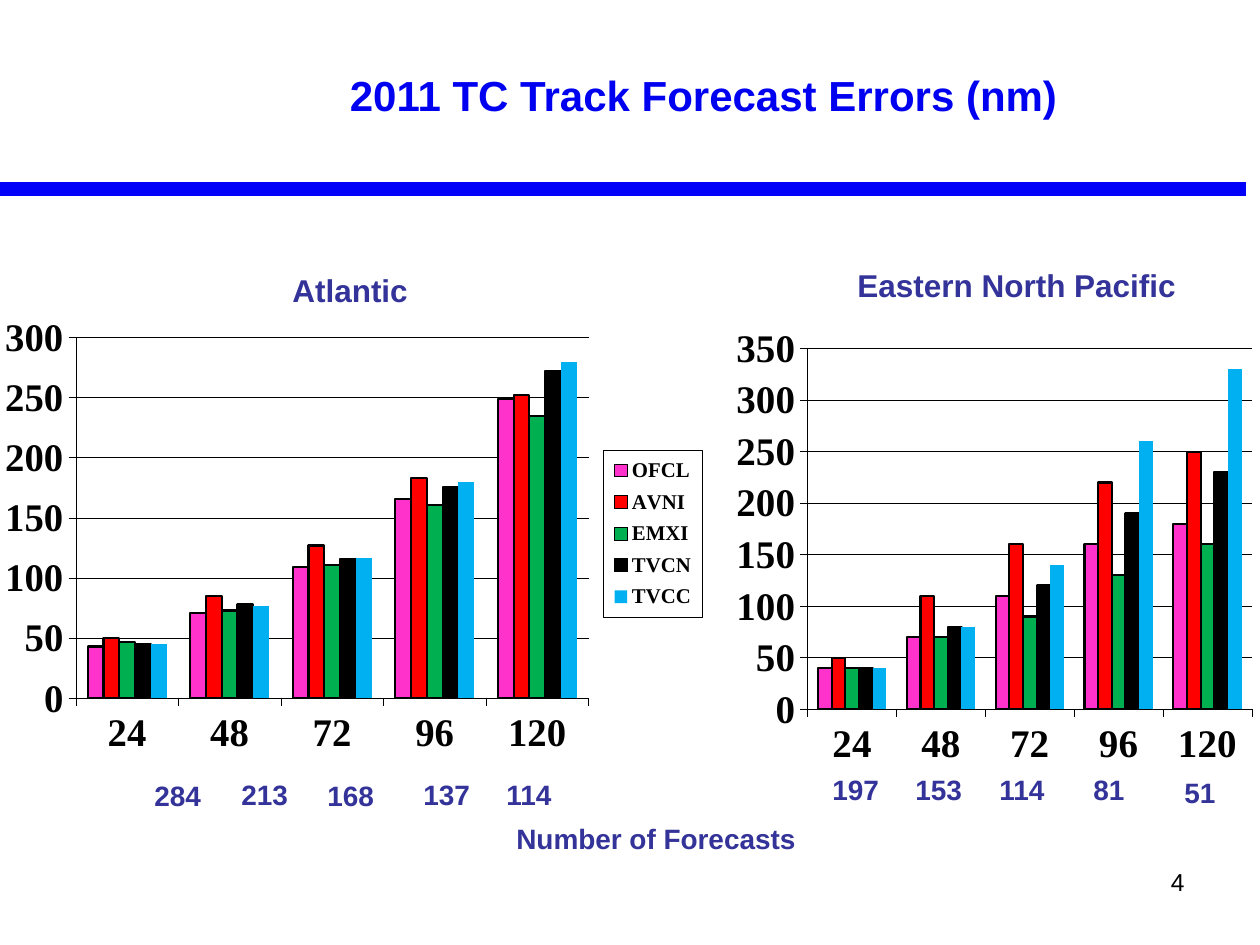
from lxml import etree
from pptx import Presentation
from pptx.chart.data import CategoryChartData
from pptx.dml.color import RGBColor
from pptx.enum.chart import XL_CHART_TYPE, XL_LEGEND_POSITION, XL_TICK_LABEL_POSITION, XL_TICK_MARK
from pptx.enum.shapes import MSO_CONNECTOR
from pptx.enum.text import MSO_ANCHOR, MSO_AUTO_SIZE, PP_ALIGN
from pptx.oxml import parse_xml
from pptx.oxml.ns import nsdecls, qn
from pptx.util import Emu, Pt

BLACK = RGBColor(0x00, 0x00, 0x00)
TITLE_BLUE = RGBColor(0x00, 0x00, 0xF1)
RULE_BLUE = RGBColor(0x01, 0x01, 0xFA)
LABEL_BLUE = RGBColor(0x33, 0x33, 0x99)
PINK = RGBColor(0xFF, 0x33, 0xCC)
RED = RGBColor(0xFF, 0x00, 0x00)
GREEN = RGBColor(0x00, 0xB0, 0x50)
SKY = RGBColor(0x00, 0xB0, 0xF0)

EMU_PER_PX = 914400 / 126
HOURS = ["24", "48", "72", "96", "120"]
SERIES_COLORS = [PINK, RED, GREEN, BLACK, SKY]

ATLANTIC_ERRORS = {
    "OFCL": [43, 71, 109, 166, 249],
    "AVNI": [50, 85, 127, 183, 252],
    "EMXI": [47, 73, 111, 161, 235],
    "TVCN": [45, 78, 116, 176, 272],
    "TVCC": [45, 77, 117, 180, 280],
}
PACIFIC_ERRORS = {
    "Series 1": [40, 70, 110, 160, 180],
    "Series 2": [50, 110, 160, 220, 250],
    "Series 3": [40, 70, 90, 130, 160],
    "Series 4": [40, 80, 120, 190, 230],
    "Series 5": [40, 80, 140, 260, 330],
}
FORECAST_COUNTS = [
    ("284", 142, 772, 73), ("213", 229, 771, 73), ("168", 315, 772, 73),
    ("137", 411, 771, 73), ("114", 494, 771, 71),
    ("197", 820, 766, 73), ("153", 903, 766, 73), ("114", 987, 766, 71),
    ("81", 1081, 766, 57), ("51", 1172, 769, 57),
]


def px(length):
    return Emu(round(length * EMU_PER_PX))


def manual_layout(x, y, width, height, inner=False):
    target = '<c:layoutTarget val="inner"/>' if inner else ""
    return parse_xml(
        f'<c:layout {nsdecls("c")}><c:manualLayout>{target}'
        '<c:xMode val="edge"/><c:yMode val="edge"/>'
        f'<c:x val="{x}"/><c:y val="{y}"/><c:w val="{width}"/><c:h val="{height}"/>'
        '</c:manualLayout></c:layout>'
    )


class SlideBuilder:
    text_font = "Arial"
    chart_font = "Times New Roman"
    axis_size = 22.3
    axis_width = 0.31

    def __init__(self, slide):
        self.slide = slide

    def style_font(self, font, name, size, color, bold=True):
        font.name = name
        font.size = Pt(size)
        font.bold = bold
        font.color.rgb = color

    def style_line(self, line, color, width):
        line.color.rgb = color
        line.width = Pt(width)

    def text(self, text, left, top, width, height, size, color=LABEL_BLUE, bold=True,
             align=PP_ALIGN.LEFT, anchor=MSO_ANCHOR.TOP, wrap=False):
        box = self.slide.shapes.add_textbox(px(left), px(top), px(width), px(height))
        frame = box.text_frame
        frame.word_wrap = wrap
        frame.auto_size = MSO_AUTO_SIZE.NONE if wrap else MSO_AUTO_SIZE.SHAPE_TO_FIT_TEXT
        frame.vertical_anchor = anchor
        paragraph = frame.paragraphs[0]
        paragraph.text = text
        paragraph.alignment = align
        self.style_font(paragraph.font, self.text_font, size, color, bold)

    def rule(self, left, right, y, color, width):
        connector = self.slide.shapes.add_connector(
            MSO_CONNECTOR.STRAIGHT, px(left), px(y), px(right), px(y))
        self.style_line(connector.line, color, width)
        etree.SubElement(connector._element.spPr, qn("a:effectLst"))

    def axis(self, axis):
        axis.major_tick_mark = XL_TICK_MARK.OUTSIDE
        axis.minor_tick_mark = XL_TICK_MARK.NONE
        self.style_font(axis.tick_labels.font, self.chart_font, self.axis_size, BLACK)
        self.style_line(axis.format.line, BLACK, self.axis_width)

    def column_chart(self, errors, left, top, width, height, maximum, plot_layout):
        data = CategoryChartData()
        data.categories = HOURS
        for name, values in errors.items():
            data.add_series(name, values)
        chart = self.slide.shapes.add_chart(
            XL_CHART_TYPE.COLUMN_CLUSTERED, px(left), px(top), px(width), px(height), data).chart
        chart.has_title = False
        chart.has_legend = False
        self.style_font(chart.font, self.chart_font, self.axis_size, BLACK)

        self.axis(chart.category_axis)
        chart.category_axis.tick_label_position = XL_TICK_LABEL_POSITION.LOW
        value_axis = chart.value_axis
        self.axis(value_axis)
        value_axis.minimum_scale = 0
        value_axis.maximum_scale = maximum
        value_axis.major_unit = 50
        value_axis.has_major_gridlines = True
        self.style_line(value_axis.major_gridlines.format.line, BLACK, self.axis_width)

        plot = chart.plots[0]
        plot.vary_by_categories = False
        plot.gap_width = 150
        plot.overlap = 0
        for series, color in zip(plot.series, SERIES_COLORS):
            series.format.fill.solid()
            series.format.fill.fore_color.rgb = color
            if color == SKY:
                series.format.line.fill.background()
            else:
                self.style_line(series.format.line, BLACK, 1.25)
        self.place(chart._chartSpace.chart.plotArea, 0, manual_layout(*plot_layout, inner=True))
        return chart

    def place(self, element, index, layout):
        for existing in element.findall(qn("c:layout")):
            element.remove(existing)
        element.insert(index, layout)

    def legend(self, chart, layout):
        chart.has_legend = True
        legend = chart.legend
        legend.position = XL_LEGEND_POSITION.RIGHT
        legend.include_in_layout = False
        self.style_font(legend.font, self.chart_font, 12, BLACK)
        element = legend._element
        self.place(element, 1, manual_layout(*layout))
        element.find(qn("c:txPr")).addprevious(parse_xml(
            f'<c:spPr {nsdecls("c", "a")}><a:solidFill><a:srgbClr val="FFFFFF"/></a:solidFill>'
            f'<a:ln w="{Pt(self.axis_width)}"><a:solidFill><a:srgbClr val="{BLACK}"/>'
            '</a:solidFill></a:ln></c:spPr>'))


def main():
    presentation = Presentation()
    presentation.slide_width = px(1260)
    presentation.slide_height = px(945)
    builder = SlideBuilder(presentation.slides.add_slide(presentation.slide_layouts[6]))

    builder.text("2011 TC Track Forecast Errors (nm)", 168, 16, 1071, 158, 24, TITLE_BLUE,
                 align=PP_ALIGN.CENTER, anchor=MSO_ANCHOR.MIDDLE, wrap=True)
    builder.rule(0, 1246, 189, RULE_BLUE, 8)

    builder.text("Number of Forecasts", 504, 815, 305, 47, 16)
    for count, left, top, width in FORECAST_COUNTS:
        builder.text(count, left, top, width, 47, 16)
    builder.text("Atlantic", 280, 265, 142, 50, 18)
    builder.text("Eastern North Pacific", 845, 260, 347, 50, 18)

    atlantic = builder.column_chart(ATLANTIC_ERRORS, 5, 315, 719, 451, 300,
                                    (0.09, 0.05, 0.72, 0.8))
    builder.legend(atlantic, (0.83, 0.3, 0.14, 0.37))
    builder.column_chart(PACIFIC_ERRORS, 709, 326, 617, 451, 350, (0.16, 0.05, 0.72, 0.8))

    builder.text("4", 903, 861, 294, 66, 14, BLACK, bold=False,
                 align=PP_ALIGN.RIGHT, wrap=True)
    presentation.save("out.pptx")


if __name__ == "__main__":
    main()
